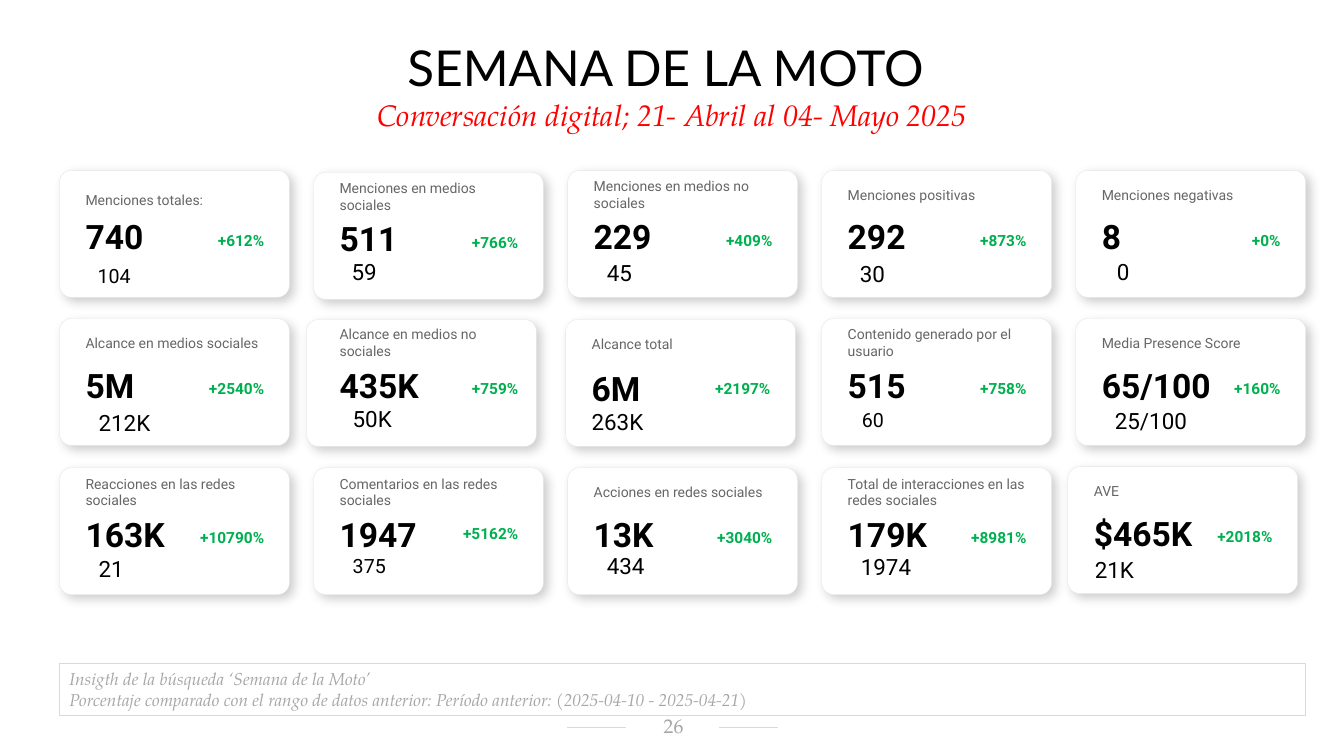
from lxml import etree
from pptx import Presentation
from pptx import util as u
from pptx.dml import color
from pptx.enum import shapes, text
from pptx.oxml import ns

CARD_LEFT, CARD_STEP = 0.59, 2.52
CARD_W, CARD_H = 2.28, 1.26
ROW_TOPS = (1.69, 3.16, 4.64)

# label, value, change, previous value, (previous left, top, width), previous size
METRICS = [
    [
        ("Menciones totales:", "740", "+612%", "104", (0.28, 0.83, 0.83), 14),
        ("Menciones en medios sociales", "511", "+766%", "59", (0.28, 0.79, 1.06), 16),
        ("Menciones en medios no sociales", "229", "+409%", "45", (0.29, 0.8, 1.29), 16),
        ("Menciones positivas", "292", "+873%", "30", (0.28, 0.81, 1.29), 16),
        ("Menciones negativas", "8", "+0%", "0", (0.31, 0.79, 0.72), 16),
    ],
    [
        ("Alcance en medios sociales", "5M", "+2540%", "212K", (0.29, 0.82, 0.73), 16),
        ("Alcance en medios no sociales", "435K", "+759%", "50K", (0.29, 0.78, 1.24), 16),
        ("Alcance total", "6M", "+2197%", "263K", (0.14, 0.81, 0.87), 16),
        ("Contenido generado por el usuario", "515", "+758%", "60", (0.3, 0.79, 1.4), 14),
        ("Media Presence Score", "65/100", "+160%", "25/100", (0.29, 0.8, 1.14), 16),
    ],
    [
        ("Reacciones en las redes sociales", "163K", "+10790%", "21", (0.29, 0.79, 0.8), 16),
        ("Comentarios en las redes sociales", "1947", "+5162%", "375", (0.29, 0.76, 0.68), 14),
        ("Acciones en redes sociales", "13K", "+3040%", "434", (0.29, 0.76, 1.13), 16),
        ("Total de interacciones en las redes sociales", "179K", "+8981%", "1974",
         (0.29, 0.77, 1.24), 16),
        ("AVE", "$465K", "+2018%", "21K", (0.09, 0.8, 0.87), 16),
    ],
]

NUDGES = {
    (0, 0): dict(label_h=0.35),
    (0, 1): dict(dy=0.02),
    (1, 1): dict(card_dx=-0.07, card_dy=0.01),
    (1, 2): dict(dx=-0.02, dy=0.01, value_dy=0.02, change_dy=-0.01),
    (2, 1): dict(change_dy=-0.04),
    (2, 4): dict(dx=-0.08, dy=-0.01),
}


def rgb(value):
    return color.RGBColor.from_string(value)


def write(p, content, size=10, font="Roboto", ink="000000", bold=False,
          italic=False, align=text.PP_ALIGN.LEFT):
    p.alignment = align
    r = p.add_run()
    r.text = content
    r.font.size = u.Pt(size)
    r.font.name = font
    r.font.color.rgb = rgb(ink)
    r.font.bold = bold
    r.font.italic = italic


class Deck:
    serif = "TeX Gyre Pagella"
    rule = "D9D9D9"
    muted = "A6A6A6"

    def __init__(self, slide):
        self.s = slide

    def fill_text(self, sp, lines, anchor):
        tf = sp.text_frame
        tf.word_wrap = True
        tf.vertical_anchor = anchor
        for i, (content, style) in enumerate(lines):
            p = tf.add_paragraph() if i else tf.paragraphs[0]
            write(p, content, **style)
        return tf

    def text(self, box, *lines, anchor=text.MSO_ANCHOR.MIDDLE):
        sp = self.s.shapes.add_textbox(*map(u.Inches, box))
        return self.fill_text(sp, lines, anchor)

    def line(self, left, right, y):
        sp = self.s.shapes.add_connector(
            shapes.MSO_CONNECTOR.STRAIGHT, *map(u.Inches, (left, y, right, y)))
        sp.line.color.rgb = rgb(self.rule)
        sp.line.width = u.Pt(0.5)
        etree.SubElement(sp._element.spPr, ns.qn("a:effectLst"))

    def panel(self, left, top):
        sp = self.s.shapes.add_shape(
            shapes.MSO_SHAPE.ROUNDED_RECTANGLE,
            *map(u.Inches, (left, top, CARD_W, CARD_H)))
        sp.adjustments[0] = 0.095
        sp.fill.solid()
        sp.fill.fore_color.rgb = rgb("FFFFFF")
        sp.line.color.rgb = rgb("E6E6E6")
        sp.line.width = u.Pt(0.25)
        sp.shadow.inherit = False
        effects = sp._element.spPr.find(ns.qn("a:effectLst"))
        shadow = etree.SubElement(
            effects, ns.qn("a:outerShdw"), blurRad=str(u.Pt(8)), dist=str(u.Pt(4)),
            dir="2700000", algn="tl", rotWithShape="0")
        tint = etree.SubElement(shadow, ns.qn("a:srgbClr"), val="000000")
        etree.SubElement(tint, ns.qn("a:alpha"), val="20000")

    def card(self, left, top, metric, dx=0, dy=0, card_dx=0, card_dy=0,
             label_h=0.24, value_dy=0, change_dy=0):
        label, value, change, previous, (px, py, pw), size = metric
        x, y = left + dx, top + dy
        inner = x + 0.16
        self.panel(x + card_dx, y + card_dy)
        self.text((inner, y + 0.12, 1.97, label_h), (label, dict(ink="666666")))
        self.text((inner, y + 0.46 + value_dy, 1.37, 0.39),
                  (value, dict(size=24, bold=True)))
        self.text((inner, y + 0.5 + change_dy, 1.97, 0.39),
                  (change, dict(size=11, ink="00B050", bold=True,
                                align=text.PP_ALIGN.RIGHT)))
        self.text((left + px, top + py, pw, 0.42), (previous, dict(size=size)))

    def footnote(self, box, *contents):
        sp = self.s.shapes.add_shape(
            shapes.MSO_SHAPE.RECTANGLE, *map(u.Inches, box))
        sp.fill.background()
        sp.line.color.rgb = rgb(self.rule)
        sp.line.width = u.Pt(0.75)
        sp.shadow.inherit = False
        style = dict(size=12.3, font=self.serif, ink=self.muted, italic=True)
        self.fill_text(sp, [(c, style) for c in contents], text.MSO_ANCHOR.TOP)

    def page_number(self, number):
        self.line(5.62, 6.21, 7.22)
        self.line(7.13, 7.72, 7.22)
        tf = self.text((6.2, 7.1, 0.94, 0.23),
                       (number, dict(size=14.1, font=self.serif, ink=self.muted,
                                     align=text.PP_ALIGN.CENTER)))
        tf.margin_left = u.Inches(0.12)
        tf.margin_top = u.Inches(0.02)


def main():
    prs = Presentation()
    prs.slide_width, prs.slide_height = u.Inches(13.33), u.Inches(7.5)
    deck = Deck(prs.slides.add_slide(prs.slide_layouts[6]))
    center = text.PP_ALIGN.CENTER
    deck.text((0, 0.32, 13.33, 1.05),
              ("SEMANA DE LA MOTO ", dict(size=35.3, font="Lato", align=center)),
              ("Conversación digital; 21- Abril al 04- Mayo 2025",
               dict(size=21.2, font=deck.serif, ink="FF0000", italic=True,
                    align=center)),
              anchor=text.MSO_ANCHOR.TOP)
    for row, (top, metrics) in enumerate(zip(ROW_TOPS, METRICS)):
        for col, metric in enumerate(metrics):
            deck.card(CARD_LEFT + col * CARD_STEP, top, metric,
                      **NUDGES.get((row, col), {}))
    deck.footnote((0.59, 6.58, 12.36, 0.52),
                  "Insigth de la búsqueda ‘Semana de la Moto’",
                  "Porcentaje comparado con el rango de datos anterior: "
                  "Período anterior: (2025-04-10 - 2025-04-21)")
    deck.page_number("26")
    prs.save("out.pptx")


if __name__ == "__main__":
    main()
